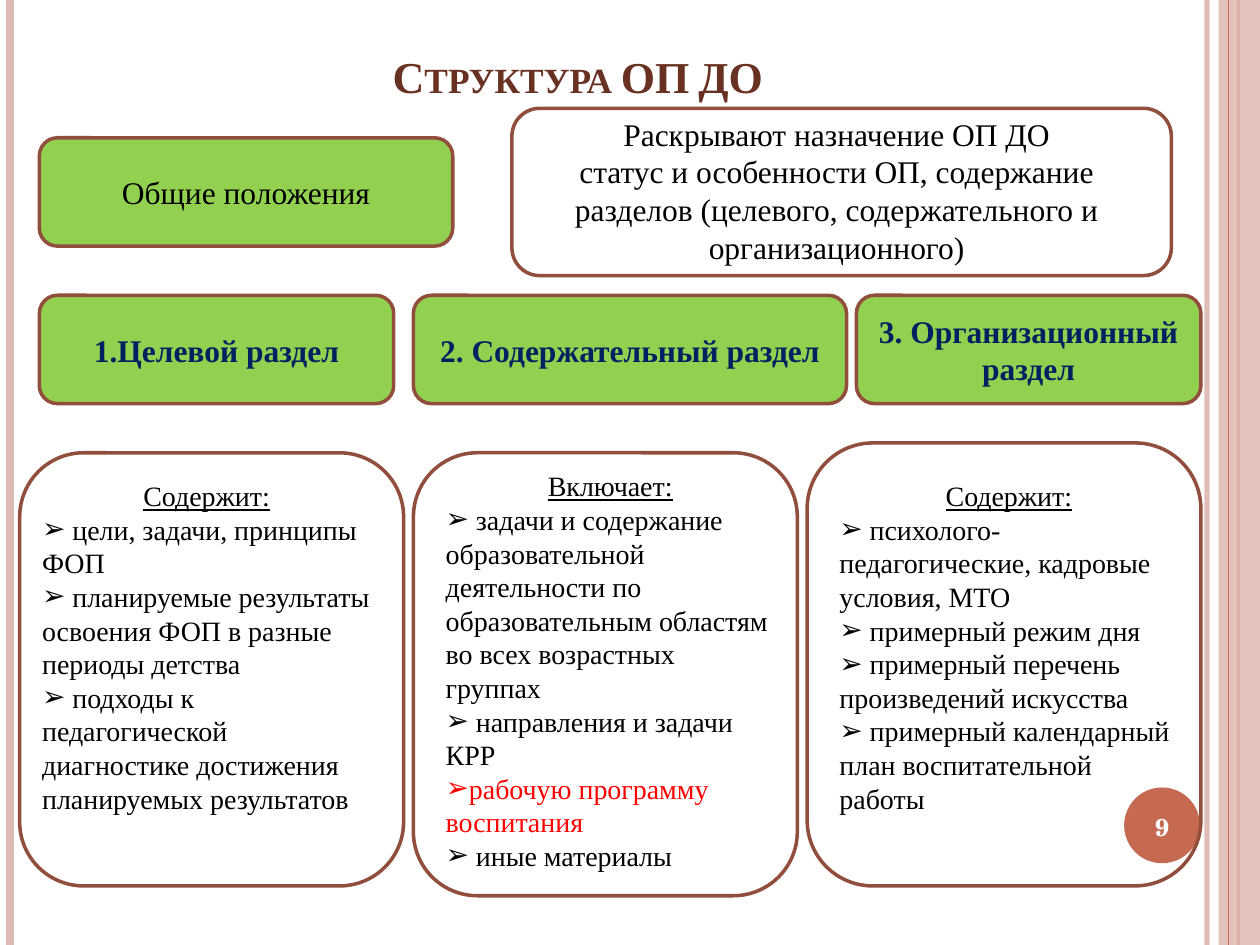
"""Build the slide on the structure of the preschool programme, on a 128 by 96 grid."""
from lxml import etree
from pptx import Presentation
from pptx.dml.color import RGBColor
from pptx.enum.shapes import MSO_CONNECTOR, MSO_SHAPE
from pptx.enum.text import MSO_ANCHOR, MSO_AUTO_SIZE, PP_ALIGN
from pptx.oxml.ns import qn
from pptx.util import Inches, Pt

ROUNDED, RECTANGLE, OVAL = MSO_SHAPE.ROUNDED_RECTANGLE, MSO_SHAPE.RECTANGLE, MSO_SHAPE.OVAL
STRAIGHT = MSO_CONNECTOR.STRAIGHT
LEFT, CENTER = PP_ALIGN.LEFT, PP_ALIGN.CENTER
TOP, MIDDLE, BOTTOM = MSO_ANCHOR.TOP, MSO_ANCHOR.MIDDLE, MSO_ANCHOR.BOTTOM
FIXED, GROW = MSO_AUTO_SIZE.NONE, MSO_AUTO_SIZE.SHAPE_TO_FIT_TEXT
ARROW = ("a:buChar", "char", "➢")
NUMBER = ("a:buAutoNum", "type", "arabicPeriod")
PLAIN = ("a:buNone", None, None)

SERIF = "Times New Roman"
THEME = {
    "pink": "DFB9B3", "rust": "C66951", "border": "924E3C", "green": "92D050",
    "title": {"size": 25.2, "name": SERIF, "color": "693122", "bold": True},
    "page": {"size": 14, "name": "TeX Gyre Schola", "color": "FFFFFF", "bold": True},
    "lead": {"size": 18, "name": SERIF, "color": "000000", "bold": False},
    "section": {"size": 18, "name": SERIF, "color": "002060", "bold": True},
    "heading": {"size": 16, "name": SERIF, "color": "000000", "bold": False, "underline": True},
    "item": {"size": 16, "name": SERIF, "color": "000000", "bold": False},
    "alert": {"size": 16, "name": SERIF, "color": "FF0000", "bold": False},
}

deck = Presentation()
deck.slide_width, deck.slide_height = Inches(10), Inches(7.5)
UNIT = deck.slide_width / 128
page = deck.slides.add_slide(deck.slide_layouts[4])


def write(box, paragraphs, anchor=MIDDLE, fit=FIXED):
    """Fill a box with (text, style, alignment, bullet) paragraphs."""
    frame = box.text_frame
    for name, value in {"word_wrap": True, "vertical_anchor": anchor, "auto_size": fit}.items():
        setattr(frame, name, value)
    for index, (text, style, align, bullet) in enumerate(paragraphs):
        para = frame.add_paragraph() if index else frame.paragraphs[0]
        para.alignment, para.space_before = align, Pt(0)
        properties = para._p.get_or_add_pPr()
        properties.set("marL", "0")
        properties.set("indent", "0")
        tag, key, value = bullet
        mark = etree.SubElement(properties, qn(tag))
        if key:
            mark.set(key, value)
        span = para.add_run()
        span.text = text
        form = dict(THEME[style])
        span.font.color.rgb = RGBColor.from_string(form.pop("color"))
        form["size"] = Pt(form["size"])
        for name, value in form.items():
            setattr(span.font, name, value)


def draw(kind, grid, fill=None, line=None):
    """Add a shape at (column, row, columns, rows)."""
    box = page.shapes.add_shape(kind, *(round(n * UNIT) for n in grid))
    box.shadow.inherit = False
    if fill:
        box.fill.solid()
        box.fill.fore_color.rgb = RGBColor.from_string(THEME[fill])
    else:
        box.fill.background()
    if line:
        box.line.color.rgb = RGBColor.from_string(THEME[line])
        box.line.width = Pt(2)
    else:
        box.line.fill.background()
    return box


stripes = [(0.958, "pink", 3, 93), (0.008, "pink", 4.5, 100),
           (0.983, "rust", 1.5, 100), (None, "pink", 0, 87), (0.975, "rust", 0.75, 100)]
for share, color, width, opacity in stripes:
    if share is None:
        stripe = draw(RECTANGLE, (123.8, 0, 4.2, 96), color)
    else:
        x = round(share * deck.slide_width)
        stripe = page.shapes.add_connector(STRAIGHT, x, 0, x, deck.slide_height)
        stripe.line.color.rgb = RGBColor.from_string(THEME[color])
        stripe.line.width = Pt(width)
        etree.SubElement(stripe._element.spPr, qn("a:effectLst"))
    if opacity < 100:
        tint = next(stripe._element.spPr.iter(qn("a:srgbClr")))
        etree.SubElement(tint, qn("a:alpha")).set("val", str(opacity * 1000))

draw(OVAL, (114.2, 80, 7.7, 7.7), "rust")
page_number = page.shapes.add_textbox(*(round(n * UNIT) for n in (113.8, 80.3, 8.5, 7.3)))
write(page_number, [("9", "page", CENTER, PLAIN)])

sections = [
    ((4, 14, 42, 11), "Общие положения", "lead", PLAIN),
    ((4, 30, 36, 11), "Целевой раздел", "section", NUMBER),
    ((42, 30, 44, 11), "2. Содержательный раздел", "section", PLAIN),
    ((87, 30, 35, 11), "3. Организационный раздел", "section", PLAIN),
]
for grid, text, style, bullet in sections:
    write(draw(ROUNDED, grid, "green", "border"), [(text, style, CENTER, bullet)])

for grid in [(2, 46, 39, 44), (42, 46, 39, 45), (82, 45, 40, 45), (52, 11, 67, 17)]:
    draw(ROUNDED, grid, line="border")

lists = [
    ((3, 48, 36, 35.7), "Содержит:", [
        " цели, задачи, принципы ФОП",
        " планируемые результаты освоения ФОП в разные периоды детства",
        " подходы к педагогической диагностике достижения планируемых результатов"]),
    ((44, 47, 36, 42.6), "Включает:", [
        " задачи и содержание образовательной деятельности по образовательным областям "
        "во всех возрастных группах",
        " направления и задачи КРР",
        "рабочую программу воспитания",
        " иные материалы"]),
    ((84, 48, 37, 35.7), "Содержит:", [
        " психолого-педагогические, кадровые условия, МТО",
        " примерный режим дня",
        " примерный перечень произведений искусства",
        " примерный календарный план воспитательной работы"]),
]
highlighted = "рабочую программу воспитания"
lead = ["Раскрывают назначение ОП ДО",
        "статус и особенности ОП, содержание разделов "
        "(целевого, содержательного и организационного)"]
bodies = [((53, 11, 64, 16.8), [(text, "lead", CENTER, PLAIN) for text in lead])]
for grid, heading, items in lists:
    rows = [(text, "alert" if text == highlighted else "item", LEFT, ARROW) for text in items]
    bodies.append((grid, [(heading, "heading", CENTER, PLAIN)] + rows))

title_body = ((6.4, 3.84, 104.6, 7.2), [("Структура ОП ДО", "title", CENTER, PLAIN)])
slots = [page.shapes.title] + [page.placeholders[index] for index in (1, 2, 3, 4)]
for slot, (grid, paragraphs) in zip(slots, [title_body] + bodies):
    for name, length in zip(("left", "top", "width", "height"), grid):
        setattr(slot, name, round(length * UNIT))
    is_title = slot is slots[0]
    write(slot, paragraphs, BOTTOM if is_title else TOP, FIXED if is_title else GROW)
page.shapes.title.text_frame.paragraphs[0].runs[0]._r.get_or_add_rPr().set("cap", "small")

deck.save("out.pptx")
